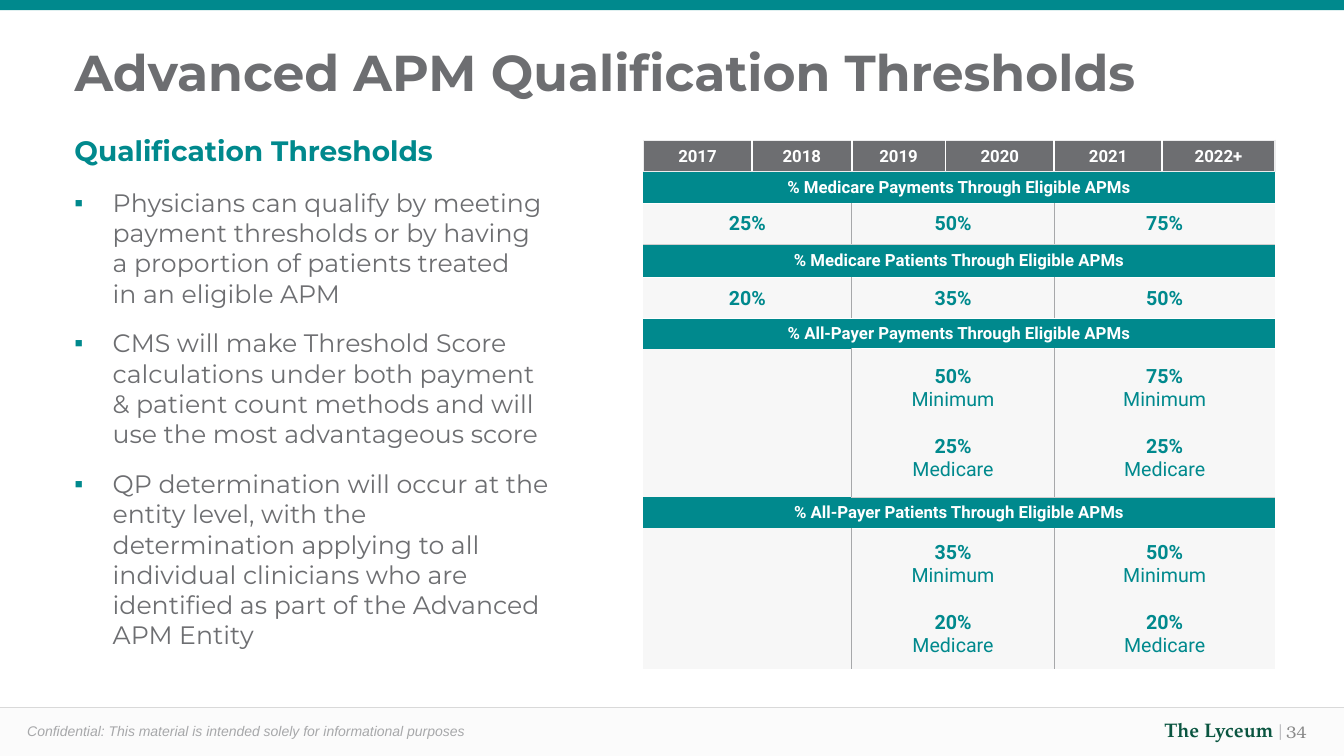
from itertools import product
from lxml.etree import SubElement
from pptx import Presentation
from pptx.dml.color import RGBColor
from pptx.enum.shapes import MSO_CONNECTOR, MSO_SHAPE
from pptx.enum.text import MSO_ANCHOR, MSO_AUTO_SIZE, PP_ALIGN
from pptx.oxml.ns import qn
from pptx.util import Inches, Pt

UNIT = Inches(0.1)
WIDE, TALL = 133.33, 75
COLORS = {
    "teal": "00898D", "gray": "6D6E71", "white": "FFFFFF", "pale": "F7F7F7",
    "foot": "FBFBFB", "rule": "D9D9D9", "note": "A7A8AA", "green": "0A5540",
    "bar": "AFAFB3", "page": "898989", "edge": "ECECED", "seam": "D0CECE",
}
PLAIN = "{2D5ABB26-0587-4C30-8999-92F81FD0307C}"
COLS = [10.8, 9.9, 9.3, 10.8, 10.7, 11.2]
ROWS = [3.1, 3.2, 4, 3.3, 4.1, 3, 14.7, 3.1, 14]
YEARS = ["2017", "2018", "2019", "2020", "2021", "2022+"]
BANDS = [
    ("% Medicare Payments Through Eligible APMs", ["25%", "50%", "75%"]),
    ("% Medicare Patients Through Eligible APMs", ["20%", "35%", "50%"]),
    ("% All-Payer Payments Through Eligible APMs",
     ["", "50%\nMinimum\n25%\nMedicare", "75%\nMinimum\n25%\nMedicare"]),
    ("% All-Payer Patients Through Eligible APMs",
     ["", "35%\nMinimum\n20%\nMedicare", "50%\nMinimum\n20%\nMedicare"]),
]
POINTS = [
    "Physicians can qualify by meeting payment thresholds or by having\v"
    "a proportion of patients treated\vin an eligible APM",
    "CMS will make Threshold Score calculations under both payment\v"
    "& patient count methods and will use the most advantageous score",
    "QP determination will occur at the entity level, with the determination "
    "applying to all individual clinicians who are identified as part of the "
    "Advanced APM Entity",
]


def grid(*cells):
    return [round(cell * UNIT) for cell in cells]


def color(name):
    return RGBColor.from_string(COLORS[name])


def style(para, face, size, tint, bold=False, italic=False):
    for run in para.runs:
        font = run.font
        font.name, font.size = face, Pt(size)
        font.bold, font.italic = bold, italic
        font.color.rgb = color(tint)


def add_bar(slide, box, tint):
    bar = slide.shapes.add_shape(MSO_SHAPE.RECTANGLE, *grid(*box))
    bar.shadow.inherit = False
    bar.fill.solid()
    bar.fill.fore_color.rgb = color(tint)
    bar.line.fill.background()


def add_text(slide, box, text):
    frame = slide.shapes.add_textbox(*grid(*box)).text_frame
    frame.word_wrap = True
    frame.text = text
    return frame


def add_title(slide, box):
    title = slide.shapes.title
    title.left, title.top, title.width, title.height = grid(*box)
    frame = title.text_frame
    frame.text = "Advanced APM Qualification Thresholds"
    frame.auto_size = MSO_AUTO_SIZE.NONE
    frame.vertical_anchor = MSO_ANCHOR.TOP
    para = frame.paragraphs[0]
    para.alignment = PP_ALIGN.LEFT
    style(para, "Montserrat", 36, "gray", True)


def add_points(slide, box):
    frame = add_text(slide, box, "\n".join(["Qualification Thresholds", *POINTS]))
    head, *points = frame.paragraphs
    style(head, "Montserrat", 20, "teal", True)
    for para in points:
        style(para, "Montserrat", 18, "gray")
        para.space_before = Pt(14)
        props = para._p.get_or_add_pPr()
        props.set("marL", str(Inches(0.38)))
        props.set("indent", str(-Inches(0.38)))
        tint = SubElement(props, qn("a:buClr"))
        SubElement(tint, qn("a:srgbClr"), val=COLORS["teal"])
        SubElement(props, qn("a:buFont"), typeface="Arial")
        SubElement(props, qn("a:buChar"), char="▪")


def add_edges(cell, **edges):
    props = cell._tc.get_or_add_tcPr()
    for side in "LRTB":
        if side in edges:
            tint, width = edges[side]
            line = SubElement(props, qn("a:ln" + side), w=str(Pt(width)))
            fill = SubElement(line, qn("a:solidFill"))
            SubElement(fill, qn("a:srgbClr"), val=COLORS[tint])


def fill_cell(cell, text, fill, tint, size, **edges):
    add_edges(cell, **edges)
    cell.fill.solid()
    cell.fill.fore_color.rgb = color(fill)
    cell.vertical_anchor = MSO_ANCHOR.MIDDLE
    cell.margin_left = cell.margin_right = cell.margin_top = Inches(0.01)
    cell.margin_bottom = 0
    cell.text = text
    for spot, para in enumerate(cell.text_frame.paragraphs):
        para.alignment = PP_ALIGN.CENTER
        style(para, "Roboto", size, tint, spot % 2 == 0)
        if spot == 2:
            para.space_before = Pt(16.5)


def add_table(slide, box):
    table = slide.shapes.add_table(len(ROWS), len(COLS), *grid(*box)).table
    table.first_row = table.horz_banding = False
    table._tbl.tblPr.find(qn("a:tableStyleId")).text = PLAIN
    for col, wide in zip(table.columns, grid(*COLS)):
        col.width = wide
    for row, tall in zip(table.rows, grid(*ROWS)):
        row.height = tall
    outer, inner = ("edge", 1), ("white", 1.5)
    last = len(YEARS) - 1
    for col, year in enumerate(YEARS):
        fill_cell(table.cell(0, col), year, "gray", "white", 12, T=outer, B=outer,
                  L=inner if col else outer, R=inner if col < last else outer)
    for band, (label, values) in enumerate(BANDS):
        row = 1 + 2 * band
        head = table.cell(row, 0)
        head.merge(table.cell(row, last))
        fill_cell(head, label, "teal", "white", 12)
        for block, value in enumerate(values):
            left, right = table.cell(row + 1, 2 * block), table.cell(row + 1, 2 * block + 1)
            edges = {}
            if block:
                edges["L"] = ("note", 0.5)
            if block < 2:
                edges["R"] = ("note", 0.5)
            if value:
                left.merge(right)
                edges["T"] = ("white", 0.5)
                if band % 2 == 0:
                    edges["B"] = ("seam", 0.5)
                fill_cell(left, value, "pale", "teal", 14, **edges)
            else:
                fill_cell(left, "", "pale", "teal", 14)
                fill_cell(right, "", "pale", "teal", 14, **edges)


def add_foot(slide, box):
    left, top, wide, tall = box
    add_bar(slide, box, "foot")
    line = slide.shapes.add_connector(
        MSO_CONNECTOR.STRAIGHT, *grid(left, top, left + wide, top))
    line.line.color.rgb = color("rule")
    line.line.width = Pt(1)
    SubElement(line._element.spPr, qn("a:effectLst"))
    note = add_text(slide, (left + 2.7, top + 1.5, 85.8, 1.7),
                    "Confidential: This material is intended solely for informational purposes")
    note.margin_left = note.margin_right = note.margin_top = note.margin_bottom = 0
    style(note.paragraphs[0], "Arial", 10, "note", italic=True)
    mark = add_text(slide, (left + 103.9, top + 0.5, 24.3, 3.4), "The Lyceum ").paragraphs[0]
    mark.alignment = PP_ALIGN.RIGHT
    style(mark, "TeX Gyre Pagella", 14, "green", True)
    bar = mark.add_run()
    bar.text = "|"
    bar.font.name, bar.font.size = "TeX Gyre Pagella", Pt(14)
    bar.font.color.rgb = color("bar")
    page = add_text(slide, (left + 126.6, top + 0.4, 4.4, 4), "34")
    page.vertical_anchor = MSO_ANCHOR.MIDDLE
    style(page.paragraphs[0], "TeX Gyre Bonum", 12, "page")


def main():
    deck = Presentation()
    deck.slide_width, deck.slide_height = grid(WIDE, TALL)
    slide = deck.slides.add_slide(deck.slide_layouts[5])
    add_foot(slide, (0, 70.2, WIDE, 4.8))
    add_bar(slide, (0, 0, WIDE, 1), "teal")
    add_points(slide, (6.4, 12.8, 49.4, 41.1))
    add_title(slide, (6.4, 3.6, 120.1, 12.2))
    add_table(slide, (63.8, 13.9, sum(COLS), sum(ROWS)))
    deck.save("out.pptx")


if __name__ == "__main__":
    main()
